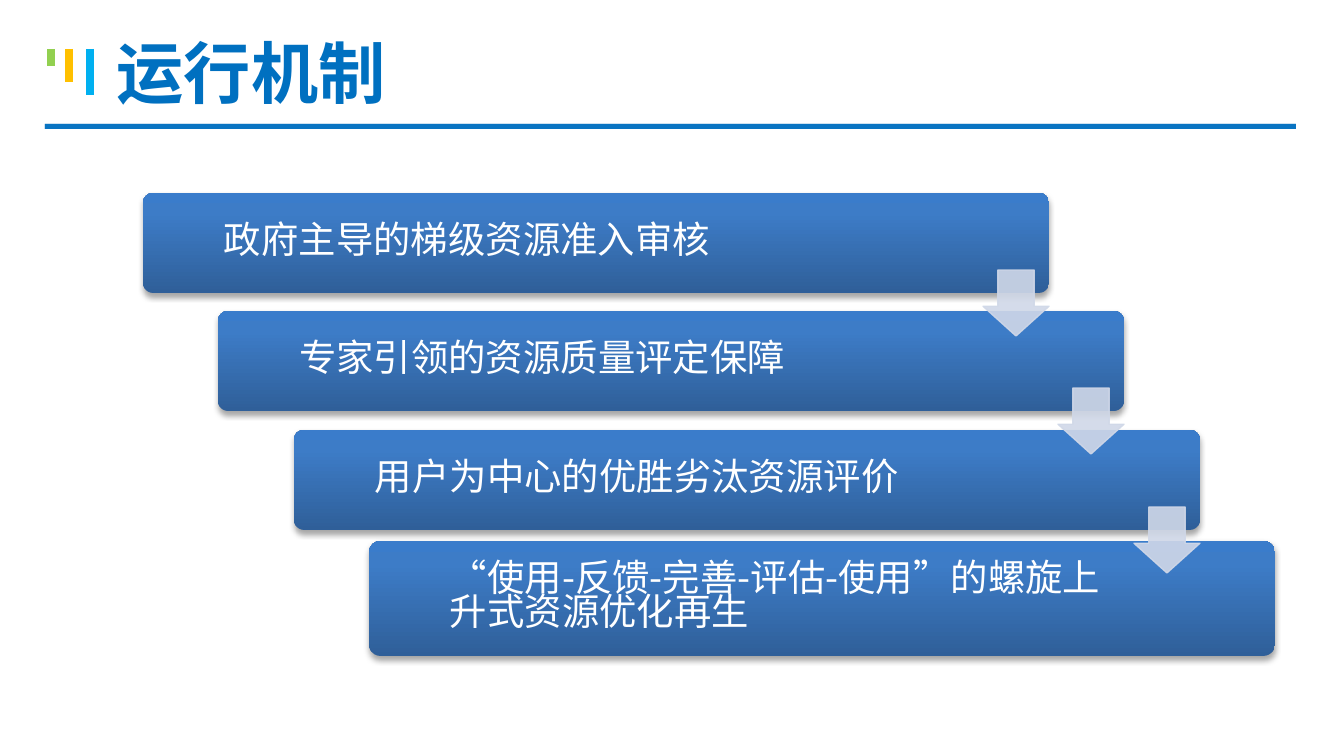
from copy import deepcopy
from lxml.etree import SubElement as Sub
from pptx import Presentation
from pptx.dml.color import RGBColor as RGB
from pptx.enum.shapes import MSO_CONNECTOR as Conn, MSO_SHAPE as Kind
from pptx.enum.text import MSO_ANCHOR as Anchor, PP_ALIGN as Align
from pptx.oxml.ns import qn
from pptx.util import Emu, Pt

SCALE = 914400 / 134.4
FONT = "Noto Sans CJK SC"
BLUE = RGB(0x00, 0x70, 0xC0)
SKY = RGB(0x00, 0xB0, 0xF0)
GOLD = RGB(0xFF, 0xC0, 0x00)
GREEN = RGB(0x92, 0xD0, 0x50)
WHITE = RGB(0xFF, 0xFF, 0xFF)
PALE = RGB(0xD0, 0xD8, 0xE8)
STOPS = [(0, RGB(0x2F, 0x5F, 0x99)), (0.8, RGB(0x3D, 0x7C, 0xC7)),
         (1, RGB(0x3A, 0x7C, 0xCB))]

STEPS = ["政府主导的梯级资源准入审核", "专家引领的资源质量评定保障",
         "用户为中心的优胜劣汰资源评价",
         "“使用-反馈-完善-评估-使用”的螺旋上升式资源优化再生"]


def px(n):
    return Emu(round(n * SCALE))


class Board:
    def __init__(self, deck):
        self.slide = deck.slides.add_slide(deck.slide_layouts[6])
        self.shapes = self.slide.shapes

    def fade(self, fill, share):
        for color in fill.iter(qn("a:srgbClr")):
            Sub(color, qn("a:alpha"), val=str(share * 1000))

    def shape(self, kind, x, y, w, h, adjs=()):
        item = self.shapes.add_shape(kind, px(x), px(y), px(w), px(h))
        item.shadow.inherit = False
        item.line.fill.background()
        for i, value in enumerate(adjs):
            item.adjustments[i] = value
        return item

    def tint(self, item, color, share):
        item.fill.solid()
        item.fill.fore_color.rgb = color
        self.fade(item._element.spPr, share)

    def rule(self, x, y, w, h):
        self.tint(self.shape(Kind.RECTANGLE, x, y, w, h), BLUE, 81)

    def tick(self, x, top, end, color):
        line = self.shapes.add_connector(
            Conn.STRAIGHT, px(x), px(top), px(x), px(end))
        line.line.color.rgb = color
        line.line.width = Pt(4.5)
        Sub(line._element.spPr, qn("a:effectLst"))

    def words(self, frame, text, size, color, bold=False):
        frame.word_wrap = True
        frame.vertical_anchor = Anchor.MIDDLE
        para = frame.paragraphs[0]
        para.alignment = Align.LEFT
        run = para.add_run()
        run.text = text
        font = run.font
        font.size, font.bold, font.name = Pt(size), bold, FONT
        font.color.rgb = color
        props = run._r.get_or_add_rPr()
        props.set("lang", "zh-CN")
        Sub(props, qn("a:ea"), typeface=FONT)
        return para

    def title(self, text, x, y, w, h):
        item = self.shape(Kind.ROUNDED_RECTANGLE, x, y, w, h)
        item.fill.background()
        self.words(item.text_frame, text, 36, BLUE, True)

    def card(self, x, y, w, h):
        item = self.shape(Kind.ROUNDED_RECTANGLE, x, y, w, h, [0.1])
        item.fill.gradient()
        item.fill.gradient_angle = 90
        props = item._element.spPr
        stops = props.find(".//" + qn("a:gsLst"))
        stops.insert(1, deepcopy(stops[0]))
        for stop, (place, color) in zip(item.fill.gradient_stops, STOPS):
            stop.position = place
            stop.color.rgb = color
        shade = Sub(props.find(qn("a:effectLst")), qn("a:outerShdw"),
                    blurRad=str(Pt(3.1)), dist=str(Pt(1.8)),
                    dir="5400000", rotWithShape="0")
        Sub(shade, qn("a:srgbClr"), val="000000")
        self.fade(shade, 35)

    def label(self, text, x, y, w, h, left, first):
        box = self.shapes.add_textbox(px(x), px(y), px(w), px(h))
        frame = box.text_frame
        frame.margin_left = frame.margin_right = px(11)
        frame.margin_top = frame.margin_bottom = px(11)
        para = self.words(frame, text, 20, WHITE)
        para.line_spacing = 0.75
        props = para._p.get_or_add_pPr()
        props.set("marL", str(px(left)))
        props.set("indent", str(px(first)))

    def arrow(self, x, y, size):
        item = self.shape(Kind.DOWN_ARROW, x, y, size, size, [0.55, 0.45])
        item.line.color.rgb = PALE
        item.line.width = Pt(0.75)
        self.tint(item, PALE, 90)


def main():
    deck = Presentation()
    deck.slide_width, deck.slide_height = px(1344), px(756)
    board = Board(deck)
    for _ in range(2):
        board.rule(45, 124, 1251, 5)
    for x, end, color in [(90, 95, SKY), (69, 82, GOLD), (51, 66, GREEN)]:
        board.tick(x, 49, end, color)
    board.title("运行机制", 97, 5, 1247, 134)

    wide, last = 906, len(STEPS) - 1
    spots = [(143 + i * 151 // 2, 193 + i * 237 // 2) for i in range(last)]
    cards = [(x, y, 100) for x, y in spots] + [(369, 541, 115)]
    for i, (text, (x, y, high)) in enumerate(zip(STEPS, cards)):
        board.card(x, y, wide, high)
        left, first = (67, 0) if i == last else (0, 67)
        board.label(text, x + 3, y + 3, 758, high - 6, left, first)
    for x, y in spots:
        board.arrow(x + wide - 66, y + 77, 66)
    deck.save("out.pptx")


if __name__ == "__main__":
    main()
